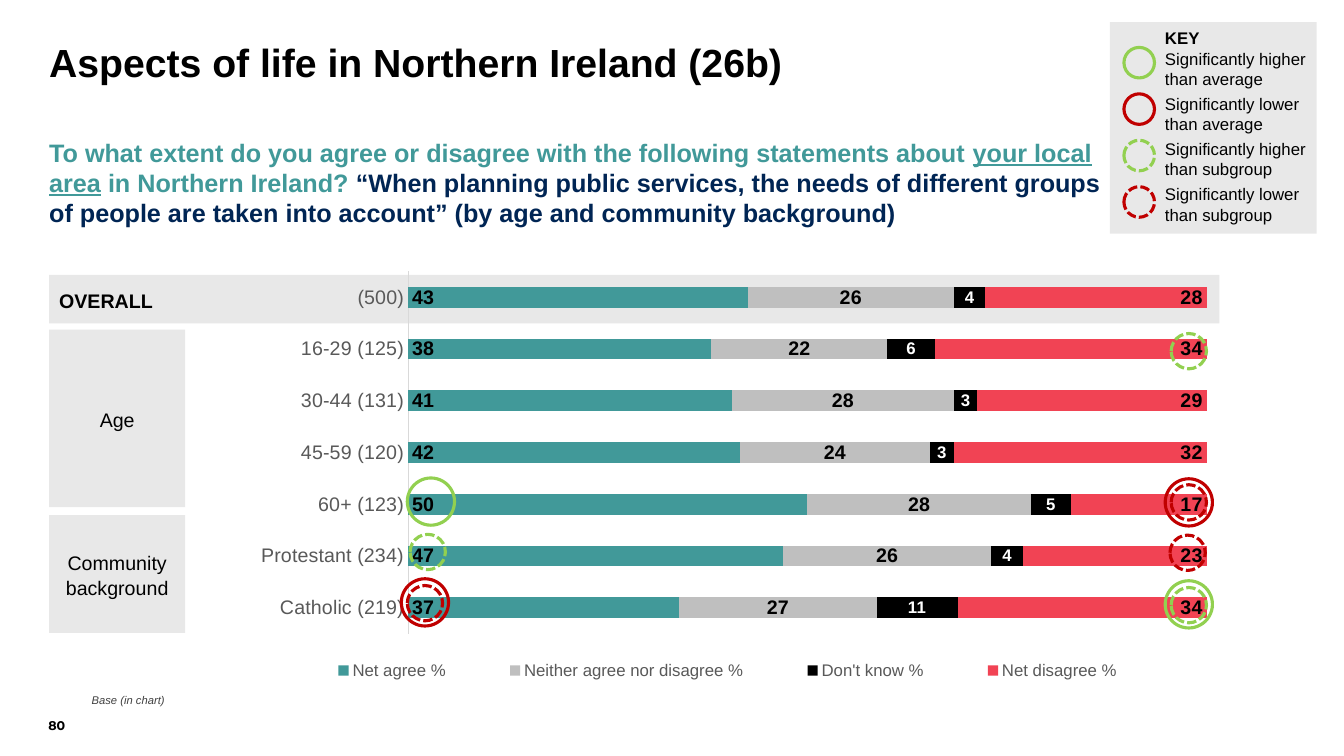
from typing import NamedTuple

import pptx
import pptx.chart.chart
import pptx.chart.data
import pptx.dml.color
import pptx.enum.chart
import pptx.enum.dml
import pptx.enum.shapes
import pptx.enum.text
import pptx.oxml
import pptx.oxml.ns
import pptx.shapes.autoshape
import pptx.shapes.shapetree
import pptx.text.text
import pptx.util

Cm = pptx.util.Cm
Pt = pptx.util.Pt
RGBColor = pptx.dml.color.RGBColor
ALIGN = pptx.enum.text.PP_ALIGN
ANCHOR = pptx.enum.text.MSO_ANCHOR
LABEL = pptx.enum.chart.XL_LABEL_POSITION
SHAPE = pptx.enum.shapes.MSO_SHAPE
Shapes = pptx.shapes.shapetree.SlideShapes | pptx.shapes.shapetree.GroupShapes

TEAL = RGBColor(0x41, 0x99, 0x99)
NAVY = RGBColor(0x00, 0x25, 0x54)
PANEL = RGBColor(0xE8, 0xE8, 0xE8)
SILVER = RGBColor(0xBF, 0xBF, 0xBF)
RULE = RGBColor(0xD9, 0xD9, 0xD9)
GREY = RGBColor(0x59, 0x59, 0x59)
DARK = RGBColor(0x40, 0x40, 0x40)
CORAL = RGBColor(0xF1, 0x43, 0x54)
GREEN = RGBColor(0x92, 0xD0, 0x50)
RED = RGBColor(0xC0, 0x00, 0x00)
BLACK = RGBColor(0x00, 0x00, 0x00)
WHITE = RGBColor(0xFF, 0xFF, 0xFF)

SMALL, LARGE = 0.89, 1.19  # ring diameters in cm


class Box(NamedTuple):
    left: float
    top: float
    width: float
    height: float


class Run(NamedTuple):
    text: str
    size: float
    color: RGBColor = BLACK
    bold: bool = False
    italic: bool = False
    underline: bool = False
    font: str = "Arial"


class Panel(NamedTuple):
    box: Box
    label: Run
    align: ALIGN


class Ring(NamedTuple):
    x: float  # centre
    y: float
    diameter: float
    color: RGBColor
    dashed: bool


class Answer(NamedTuple):
    name: str
    values: tuple[int, ...]
    fill: RGBColor
    label_size: int
    label_color: RGBColor
    label_position: LABEL


PANELS = [
    Panel(Box(1.24, 6.93, 29.49, 1.22), Run("OVERALL", 14, bold=True), ALIGN.LEFT),
    Panel(Box(1.24, 8.31, 3.43, 4.47), Run("Age", 14), ALIGN.CENTER),
    Panel(Box(1.24, 12.98, 3.43, 2.97), Run("Community background", 14), ALIGN.CENTER),
]
KEY = [
    ("Significantly higher than average", GREEN, False),
    ("Significantly lower than average", RED, False),
    ("Significantly higher than subgroup", GREEN, True),
    ("Significantly lower than subgroup", RED, True),
]
GROUPS = ["Catholic (219)", "Protestant (234)", "60+ (123)", "45-59 (120)",
          "30-44 (131)", "16-29 (125)", "(500)"]
ANSWERS = [
    Answer("Net agree %", (37, 47, 50, 42, 41, 38, 43), TEAL, 14, BLACK, LABEL.INSIDE_BASE),
    Answer("Neither agree nor disagree %", (27, 26, 28, 24, 28, 22, 26), SILVER, 14, BLACK, LABEL.CENTER),
    Answer("Don't know %", (11, 4, 5, 3, 3, 6, 4), BLACK, 12, WHITE, LABEL.CENTER),
    Answer("Net disagree %", (34, 23, 17, 32, 29, 34, 28), CORAL, 14, BLACK, LABEL.INSIDE_END),
]
RINGS = [
    Ring(29.96, 8.85, SMALL, GREEN, True),
    Ring(10.86, 12.64, LARGE, GREEN, False),
    Ring(29.96, 12.66, SMALL, RED, True),
    Ring(29.96, 12.66, LARGE, RED, False),
    Ring(10.78, 13.91, SMALL, GREEN, True),
    Ring(29.93, 13.93, SMALL, RED, True),
    Ring(10.71, 15.18, LARGE, RED, False),
    Ring(10.71, 15.2, SMALL, RED, True),
    Ring(29.96, 15.25, SMALL, GREEN, True),
    Ring(29.96, 15.23, LARGE, GREEN, False),
]


def write(frame: pptx.text.text.TextFrame, runs: list[Run], spacing: float,
          align: ALIGN = ALIGN.LEFT) -> None:
    paragraph = frame.paragraphs[0]
    paragraph.alignment = align
    paragraph.line_spacing = spacing
    for item in runs:
        run = paragraph.add_run()
        run.text = item.text
        run.font.name, run.font.size = item.font, Pt(item.size)
        run.font.color.rgb = item.color
        run.font.bold, run.font.italic = item.bold, item.italic
        run.font.underline = item.underline


def add_text(shapes: Shapes, box: Box, runs: list[Run], spacing: float = 1.0,
             anchor: ANCHOR = ANCHOR.TOP, wrap: bool = True) -> None:
    frame = shapes.add_textbox(*map(Cm, box)).text_frame
    frame.margin_left = frame.margin_right = frame.margin_top = frame.margin_bottom = 0
    frame.word_wrap = wrap
    frame.vertical_anchor = anchor
    write(frame, runs, spacing)


def add_panel(shapes: Shapes, box: Box) -> pptx.shapes.autoshape.Shape:
    panel = shapes.add_shape(SHAPE.RECTANGLE, *map(Cm, box))
    panel.shadow.inherit = False
    panel.fill.solid()
    panel.fill.fore_color.rgb = PANEL
    panel.line.fill.background()
    return panel


def add_ring(shapes: Shapes, ring: Ring) -> None:
    radius = ring.diameter / 2
    box = Box(ring.x - radius, ring.y - radius, ring.diameter, ring.diameter)
    circle = shapes.add_shape(SHAPE.OVAL, *map(Cm, box))
    circle.shadow.inherit = False
    circle.fill.background()
    circle.line.color.rgb = ring.color
    circle.line.width = Pt(2.25)
    if ring.dashed:
        # python-pptx names the sysDash preset SQUARE_DOT's neighbour, so set it directly
        dash = pptx.oxml.parse_xml(f'<a:prstDash {pptx.oxml.ns.nsdecls("a")} val="sysDash"/>')
        circle.line._get_or_add_ln().append(dash)


def add_key(shapes: Shapes) -> None:
    key = shapes.add_group_shape().shapes
    add_panel(key, Box(27.97, 0.56, 5.21, 5.33))
    add_text(key, Box(29.36, 0.64, 1.14, 0.51), [Run("KEY", 12, bold=True)], 1.1)
    for row, (meaning, color, dashed) in enumerate(KEY):
        add_ring(key, Ring(28.71, 1.58 + 1.17 * row, 0.77, color, dashed))
        add_text(key, Box(29.36, 1.22 + 1.14 * row, 3.66, 1.02), [Run(meaning, 12)])


def set_layout(parent, index: int, box: Box, inner: bool = False) -> None:
    """Place a chart part by fractions of the chart area."""
    for old in parent.findall(pptx.oxml.ns.qn("c:layout")):
        parent.remove(old)
    target = '<c:layoutTarget val="inner"/>' if inner else ""
    modes = "".join(f'<c:{axis}Mode val="edge"/>' for axis in "xy")
    sizes = "".join(f'<c:{side} val="{value}"/>' for side, value in zip("xywh", box))
    parent.insert(index, pptx.oxml.parse_xml(
        f'<c:layout {pptx.oxml.ns.nsdecls("c")}><c:manualLayout>'
        f'{target}{modes}{sizes}</c:manualLayout></c:layout>'))


def style_font(font: pptx.text.text.Font, size: int, color: RGBColor, bold: bool = False) -> None:
    font.name, font.size, font.bold = "Arial", Pt(size), bold
    font.color.rgb = color


def add_answers_chart(shapes: Shapes) -> None:
    data = pptx.chart.data.CategoryChartData(number_format="0")
    data.categories = GROUPS
    for answer in ANSWERS:
        data.add_series(answer.name, answer.values)
    kind = pptx.enum.chart.XL_CHART_TYPE.BAR_STACKED_100
    chart = shapes.add_chart(kind, Cm(4.17), Cm(6.4), Cm(26.24), Cm(11.05), data).chart
    style_font(chart.font, 10, BLACK)
    chart.has_title = False

    # Axes
    groups = chart.category_axis
    groups.major_tick_mark = groups.minor_tick_mark = pptx.enum.chart.XL_TICK_MARK.NONE
    style_font(groups.tick_labels.font, 14, GREY)
    groups.format.line.color.rgb = RULE
    groups.format.line.width = Pt(0.75)
    chart.value_axis.visible = False
    chart.value_axis.has_major_gridlines = False

    # Bars and their labels
    bars = chart.plots[0]
    bars.gap_width, bars.overlap, bars.vary_by_categories = 150, 100, False
    for answer, series in zip(ANSWERS, bars.series):
        series.format.fill.solid()
        series.format.fill.fore_color.rgb = answer.fill
        labels = series.data_labels
        labels.show_value = True
        labels.number_format, labels.number_format_is_linked = "0", False
        labels.position = answer.label_position
        style_font(labels.font, answer.label_size, answer.label_color, True)

    # Legend and placement
    chart.has_legend = True
    chart.legend.position = pptx.enum.chart.XL_LEGEND_POSITION.BOTTOM
    chart.legend.include_in_layout = False
    style_font(chart.legend.font, 12, GREY)
    qn = pptx.oxml.ns.qn
    body = chart.element.find(qn("c:chart"))
    set_layout(body.find(qn("c:plotArea")), 0, Box(0.233, 0.04, 0.767, 0.826), True)
    set_layout(body.find(qn("c:legend")), 1, Box(0.11, 0.915, 0.86, 0.07))


def main() -> None:
    deck = pptx.Presentation()
    deck.slide_width, deck.slide_height = Cm(33.87), Cm(19.05)
    shapes = deck.slides.add_slide(deck.slide_layouts[6]).shapes

    # Heading and question
    add_text(shapes, Box(1.24, 1.09, 25.96, 2.16),
             [Run("Aspects of life in Northern Ireland (26b)", 28, bold=True)], 0.9)
    add_text(shapes, Box(1.24, 3.45, 27.08, 2.31), [
        Run("To what extent do you agree or disagree with the following statements about ", 18, TEAL, True),
        Run("your local area", 18, TEAL, True, underline=True),
        Run(" in Northern Ireland? ", 18, TEAL, True),
        Run("“When planning public services, the needs of different groups of people are "
            "taken into account” (by age and community background)", 18, NAVY, True)])
    add_key(shapes)

    # Row panels, chart and significance rings
    for panel in PANELS:
        frame = add_panel(shapes, panel.box).text_frame
        frame.word_wrap = True
        frame.vertical_anchor = ANCHOR.MIDDLE
        write(frame, [panel.label], 1.1, panel.align)
    add_answers_chart(shapes)
    for ring in RINGS:
        add_ring(shapes, ring)

    # Footer
    add_text(shapes, Box(2.31, 17.45, 31.32, 0.36),
             [Run("Base (in chart)", 8, DARK, italic=True)], 1.1, ANCHOR.BOTTOM)
    add_text(shapes, Box(1.22, 17.45, 0.84, 1.02),
             [Run("80", 9, bold=True, font="Montserrat")], 1.0, ANCHOR.BOTTOM, False)
    deck.save("out.pptx")


if __name__ == "__main__":
    main()
